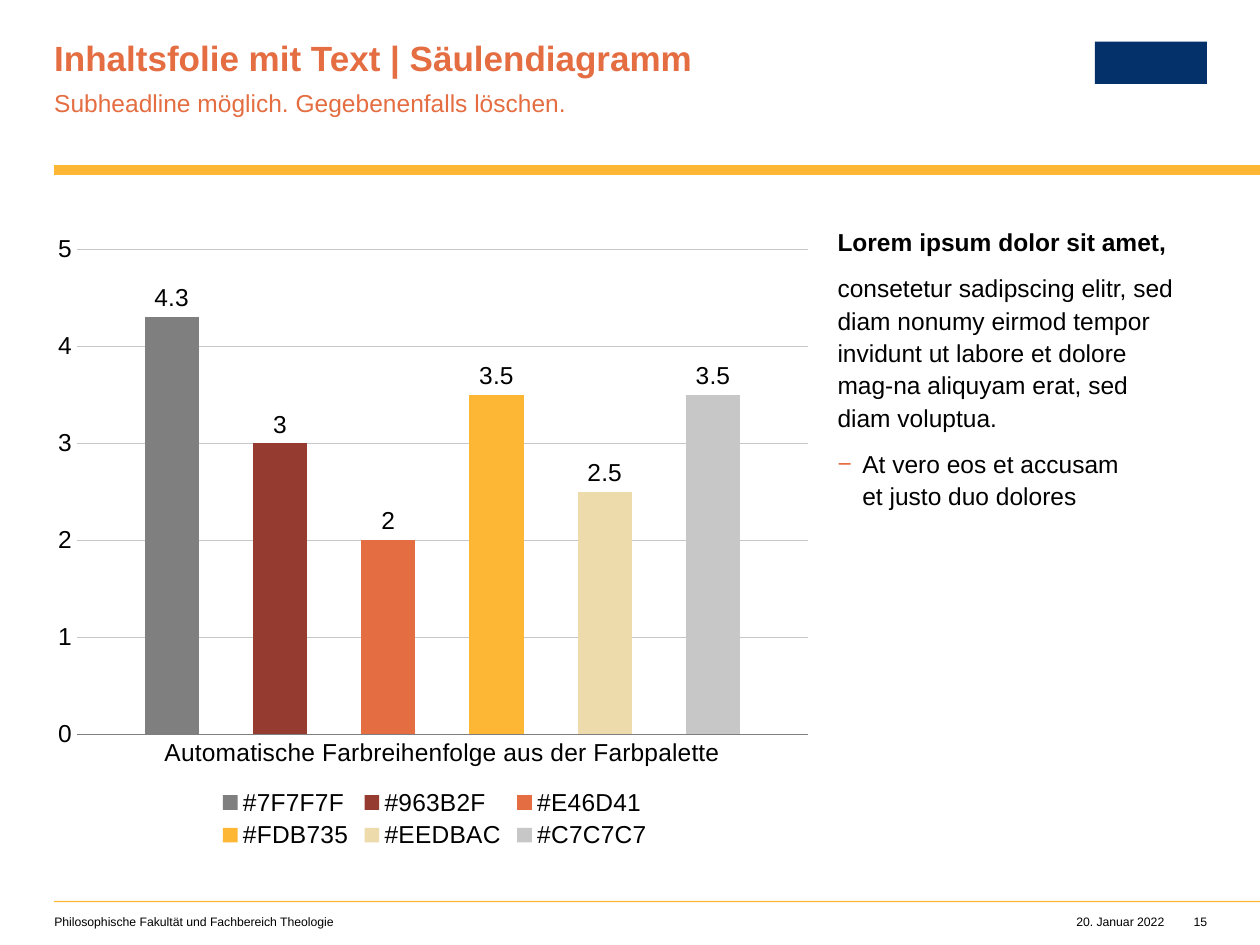
from lxml import etree
from pptx import Presentation
from pptx.chart.data import CategoryChartData
from pptx.dml.color import RGBColor
from pptx.enum.chart import XL_CHART_TYPE, XL_LABEL_POSITION, XL_LEGEND_POSITION, XL_TICK_MARK
from pptx.enum.shapes import MSO_SHAPE
from pptx.enum.text import PP_ALIGN
from pptx.oxml import parse_xml
from pptx.oxml.ns import nsdecls, qn
from pptx.util import Pt

COLORS = {"text": "000000", "accent": "E46D41", "rule": "FDB735",
          "logo": "04316A", "axis": "7F7F7F", "grid": "C7C7C7"}
LEFT = 31


def add_block(left, top, width, height, color):
    block = slide.shapes.add_shape(MSO_SHAPE.RECTANGLE, Pt(left), Pt(top), Pt(width), Pt(height))
    block.shadow.inherit = False
    block.fill.solid()
    block.fill.fore_color.rgb = RGBColor.from_string(COLORS[color])
    block.line.fill.background()


def add_text(left, top, width, height, paragraphs, size, color="text", bold=False,
             align=PP_ALIGN.LEFT, spacing=1.0, after=0, inset_right=0):
    frame = slide.shapes.add_textbox(Pt(left), Pt(top), Pt(width), Pt(height)).text_frame
    frame.word_wrap = True
    frame.margin_left = frame.margin_top = frame.margin_bottom = 0
    frame.margin_right = Pt(inset_right)
    for index, wording in enumerate(paragraphs):
        paragraph = frame.add_paragraph() if index else frame.paragraphs[0]
        paragraph.text = wording
        paragraph.alignment = align
        paragraph.line_spacing = spacing
        paragraph.space_after = Pt(after)
        for run in paragraph.runs:
            run.font.name = "Arial"
            run.font.size = Pt(size)
            run.font.bold = bold
            run.font.color.rgb = RGBColor.from_string(COLORS[color])
    return frame.paragraphs


presentation = Presentation()
presentation.slide_width, presentation.slide_height = Pt(720), Pt(540)
slide = presentation.slides.add_slide(presentation.slide_layouts[6])

# Rules above and below the content, plain block in the logo's place
add_block(LEFT, 94.3, 689, 5.7, "rule")
add_block(LEFT, 514.8, 689, 0.8, "rule")
add_block(625.7, 23.8, 64, 24.2, "logo")

# Headline and subheadline
add_text(LEFT, 23.8, 404, 21.6, ["Inhaltsfolie mit Text | Säulendiagramm"],
         20, "accent", bold=True, spacing=0.9)
add_text(LEFT, 48.5, 404, 17, ["Subheadline möglich. Gegebenenfalls löschen."],
         14, "accent", spacing=1.1, after=8)

# Column chart: one series per palette colour
palette = {"7F7F7F": 4.3, "963B2F": 3, "E46D41": 2, "FDB735": 3.5, "EEDBAC": 2.5, "C7C7C7": 3.5}
palette_data = CategoryChartData()
palette_data.categories = ["Automatische Farbreihenfolge aus der Farbpalette"]
for tone, value in palette.items():
    palette_data.add_series(f"#{tone}", [value])
chart = slide.shapes.add_chart(XL_CHART_TYPE.COLUMN_CLUSTERED, Pt(LEFT), Pt(128),
                               Pt(435), Pt(360), palette_data).chart
chart.has_title = False
chart.font.name = "Arial"
chart.font.size = Pt(14)
chart.font.color.rgb = RGBColor.from_string(COLORS["text"])
chart.has_legend = True
chart.legend.position = XL_LEGEND_POSITION.BOTTOM
chart.legend.include_in_layout = False

columns = chart.plots[0]
columns.vary_by_categories = False
columns.gap_width = 250
columns.overlap = -100
columns.has_data_labels = True
columns.data_labels.show_value = True
columns.data_labels.position = XL_LABEL_POSITION.OUTSIDE_END
for series, tone in zip(columns.series, palette):
    series.format.fill.solid()
    series.format.fill.fore_color.rgb = RGBColor.from_string(tone)

# Axes and gridlines
for axis in (chart.category_axis, chart.value_axis):
    axis.major_tick_mark = axis.minor_tick_mark = XL_TICK_MARK.NONE
chart.value_axis.minimum_scale = 0
chart.value_axis.maximum_scale = 5
chart.value_axis.major_unit = 1
chart.value_axis.format.line.fill.background()
for line, color in ((chart.category_axis.format.line, "axis"),
                    (chart.value_axis.major_gridlines.format.line, "grid")):
    line.width = Pt(0.5)
    line.color.rgb = RGBColor.from_string(COLORS[color])

# Fixed inner plot area
plot_area = chart.element.find(".//" + qn("c:plotArea"))
for old_layout in plot_area.findall(qn("c:layout")):
    plot_area.remove(old_layout)
placement = {"layoutTarget": "inner", "xMode": "edge", "yMode": "edge",
             "x": 0.03, "y": 0.04, "w": 0.96, "h": 0.77}
entries = "".join(f'<c:{key} val="{value}"/>' for key, value in placement.items())
plot_area.insert(0, parse_xml(
    f'<c:layout {nsdecls("c")}><c:manualLayout>{entries}</c:manualLayout></c:layout>'))

# Text beside the chart
lead, body, bullet = add_text(
    478.6, 128, 211, 360,
    ["Lorem ipsum dolor sit amet,",
     "consetetur sadipscing elitr, sed diam nonumy eirmod tempor invidunt ut labore et dolore "
     "mag-na aliquyam erat, sed diam voluptua.",
     "At vero eos et accusam\net justo duo dolores"],
    14, spacing=1.1, after=8, inset_right=14.2)
lead.runs[0].font.bold = True
bullet.level = 1
bullet_format = bullet._p.get_or_add_pPr()
bullet_format.set("marL", str(Pt(14.2)))
bullet_format.set("indent", str(-Pt(14.2)))
bullet_color = etree.SubElement(bullet_format, qn("a:buClr"))
etree.SubElement(bullet_color, qn("a:srgbClr"), val=COLORS["accent"])
etree.SubElement(bullet_format, qn("a:buFont"), typeface="Arial")
etree.SubElement(bullet_format, qn("a:buChar"), char="−")

# Footer
for left, width, wording, align in (
        (LEFT, 323, "Philosophische Fakultät und Fachbereich Theologie", PP_ALIGN.LEFT),
        (614, 51.3, "20. Januar 2022", PP_ALIGN.RIGHT),
        (675, 14.7, "15", PP_ALIGN.RIGHT)):
    add_text(left, 522.7, width, 8.5, [wording], 7, align=align)

presentation.save("out.pptx")
